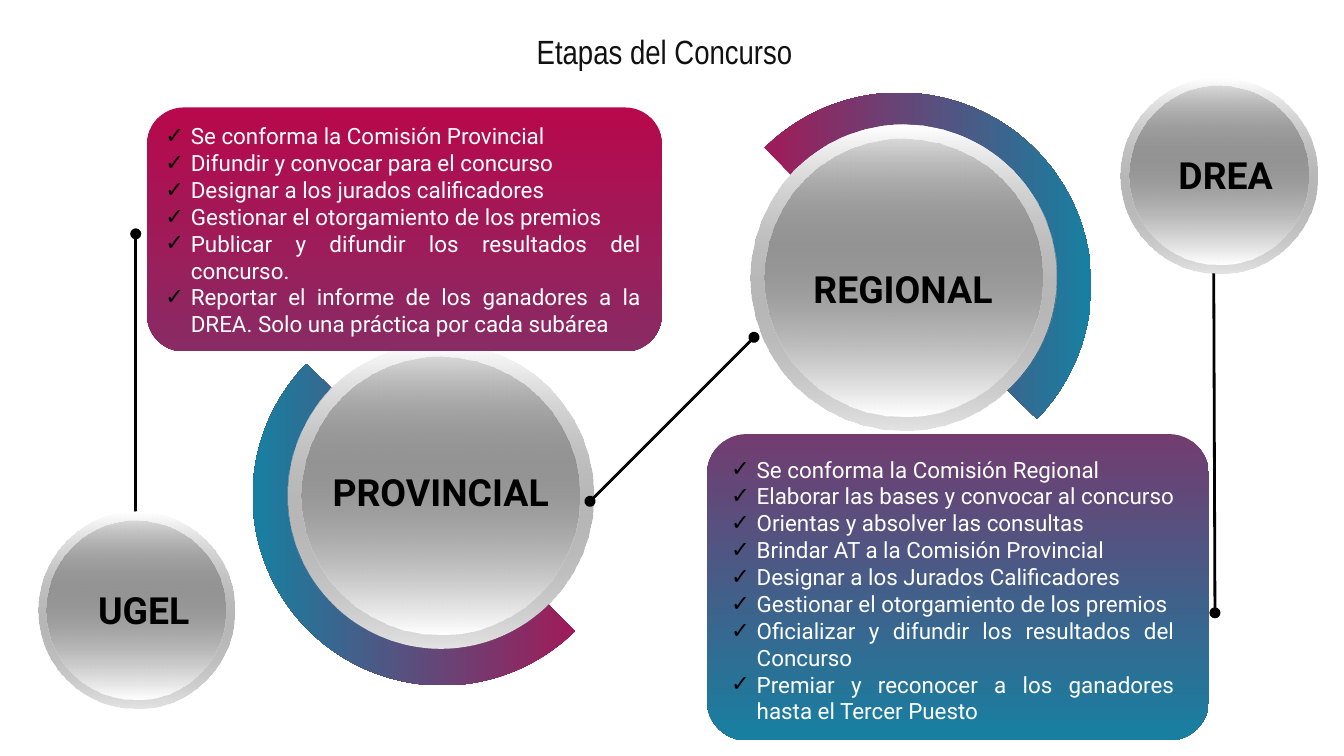
"""Build the slide on the stages of the contest, from UGEL to DREA."""
from lxml.etree import SubElement
from pptx import Presentation
from pptx.dml.color import RGBColor
from pptx.enum.shapes import MSO_CONNECTOR, MSO_SHAPE
from pptx.enum.text import MSO_ANCHOR, MSO_AUTO_SIZE, PP_ALIGN
from pptx.oxml.ns import qn
from pptx.util import Inches, Pt

THEME = {
    "ink": RGBColor(0, 0, 0), "title": RGBColor(17, 17, 17),
    "paper": RGBColor(255, 255, 255), "rose": RGBColor.from_string("B7094C"),
    "wine": RGBColor.from_string("892B64"), "plum": RGBColor.from_string("723C70"),
    "teal": RGBColor.from_string("1780A1"),
    "head": ("Arial Narrow", Pt(18)), "label": ("Roboto", Pt(20)),
    "list": ("Roboto", Pt(12)), "line": Pt(1.5),
}

deck = Presentation()
deck.slide_width = Inches(10)
deck.slide_height = deck.slide_width * 9 // 16
slide = deck.slides.add_slide(deck.slide_layouts[3])
shapes = slide.shapes
UNIT = deck.slide_width / 100


def cells(*counts):
    """Turn counts of grid cells, a hundred to the slide's width, into lengths."""
    return [round(count * UNIT) for count in counts]


def paint(shape, first, last, turn, alpha=None):
    """Fill a shape with a two-colour blend and no outline."""
    shape.shadow.inherit = False
    shape.line.fill.background()
    shape.fill.gradient()
    shape.fill.gradient_angle = turn
    for stop, tone, spot in zip(shape.fill.gradient_stops, (first, last), (0, 1)):
        stop.color.rgb = THEME[tone]
        stop.position = spot
    if alpha:
        tint = shape._element.spPr.find(".//" + qn("a:srgbClr"))
        SubElement(tint, qn("a:alpha"), val=str(alpha * 1000))


links = []
for ends in ((10.1, 17.4, 10.1, 40.9), (90.4, 45.6, 90.3, 17.9)):
    links.append(shapes.add_connector(MSO_CONNECTOR.STRAIGHT, *cells(*ends)))

frames = []
nodes = [
    ("PROVINCIAL", 32.8, 36.9, 22.75, 20.7, 32.8, 33.9, (18.8, 22.8, 28.2, 270)),
    ("REGIONAL", 67.25, 20.65, 22.75, 20.7, 67.2, 18.8, (52.6, 6.9, 28.6, 90)),
    ("UGEL", 10.15, 45.4, 14.6, 13.3, 10.7, 42.7, None),
    ("DREA", 90.7, 13.05, 14.6, 13.3, 91.2, 10.3, None),
]
for name, mid, row, outer, inner, axis, top, arc in nodes:
    if arc:
        left, high, size, spin = arc
        band = shapes.add_shape(MSO_SHAPE.BLOCK_ARC, *cells(left, high, size, size))
        band.rotation = spin
        for spot, value in enumerate((81.35, 188.53, 0.23)):
            band.adjustments[spot] = value
        paint(band, "rose", "teal", 90)
    for size, turn in ((outer, None), (outer, 90), (inner, 270)):
        disc = shapes.add_shape(
            MSO_SHAPE.OVAL, *cells(mid - size / 2, row - size / 2, size, size))
        if turn:
            paint(disc, "ink", "paper", turn, alpha=11)
        else:
            disc.shadow.inherit = False
            disc.line.fill.background()
            disc.fill.solid()
            disc.fill.fore_color.rgb = THEME["paper"]
    label = shapes.add_textbox(*cells(axis - 9.3, top, 18.6, 9.1))
    frames.append((label, [name], "label", "ink", PP_ALIGN.CENTER, MSO_ANCHOR.TOP))

links.append(shapes.add_connector(
    MSO_CONNECTOR.STRAIGHT, *cells(43.9, 37.3, 56.1, 25.1)))
for link in links:
    link.line.color.rgb = THEME["ink"]
    link.line.width = THEME["line"]
    tips = ("headEnd", "tailEnd") if link is links[-1] else ("headEnd",)
    for tip in tips:
        SubElement(link.line._get_or_add_ln(), qn("a:" + tip), type="oval")
    SubElement(link._element.spPr, qn("a:effectLst"))

title, *bodies = slide.placeholders
title.left, title.top, title.width, title.height = cells(4.5, 1.3, 89.9, 4.3)
frames.append((title, ["Etapas del Concurso"], "head", "title",
               PP_ALIGN.CENTER, MSO_ANCHOR.TOP))

panels = [
    ((10.95, 8, 38.3, 18.15), 0.15, "rose", "wine", (11.3, 8, 37.4, 18.2), [
        "Se conforma la Comisión Provincial",
        "Difundir y convocar para el concurso",
        "Designar a los jurados calificadores",
        "Gestionar el otorgamiento de los premios",
        "Publicar y difundir los resultados del concurso.",
        "Reportar el informe de los ganadores a la DREA. "
        "Solo una práctica por cada subárea",
    ]),
    ((52.6, 32.3, 37.35, 22.8), 0.13, "plum", "teal", (53.4, 32.9, 35, 22), [
        "Se conforma la Comisión Regional",
        "Elaborar las bases y convocar al concurso",
        "Orientas y absolver las consultas",
        "Brindar AT a la Comisión Provincial",
        "Designar a los Jurados Calificadores",
        "Gestionar el otorgamiento de los premios",
        "Oficializar y difundir los resultados del Concurso",
        "Premiar y reconocer a los ganadores hasta el Tercer Puesto",
    ]),
]
for body, (area, bend, first, last, room, steps) in zip(bodies, panels):
    panel = shapes.add_shape(MSO_SHAPE.ROUNDED_RECTANGLE, *cells(*area))
    panel.adjustments[0] = bend
    paint(panel, first, last, 270)
    body.left, body.top, body.width, body.height = cells(*room)
    shapes._spTree.append(body._element)
    frames.append((body, steps, "list", "paper", PP_ALIGN.JUSTIFY, MSO_ANCHOR.MIDDLE))

for shape, lines, role, tone, align, anchor in frames:
    frame = shape.text_frame
    frame.word_wrap = True
    frame.auto_size = MSO_AUTO_SIZE.NONE
    frame.vertical_anchor = anchor
    frame.margin_left = frame.margin_right = Inches(0.1)
    frame.margin_top = frame.margin_bottom = Inches(0.1)
    for count, line in enumerate(lines):
        para = frame.add_paragraph() if count else frame.paragraphs[0]
        para.alignment = align
        para.space_before = Pt(0)
        run = para.add_run()
        run.text = line
        run.font.name, run.font.size = THEME[role]
        run.font.bold = role == "label"
        run.font.color.rgb = THEME[tone]
        if role == "list":
            props = para._p.get_or_add_pPr()
            props.set("marL", str(Inches(0.19)))
            props.set("indent", str(-Inches(0.19)))
            hue = SubElement(props, qn("a:buClr"))
            SubElement(hue, qn("a:srgbClr"), val=str(THEME["ink"]))
            SubElement(props, qn("a:buChar"), char="✓")

deck.save("out.pptx")
